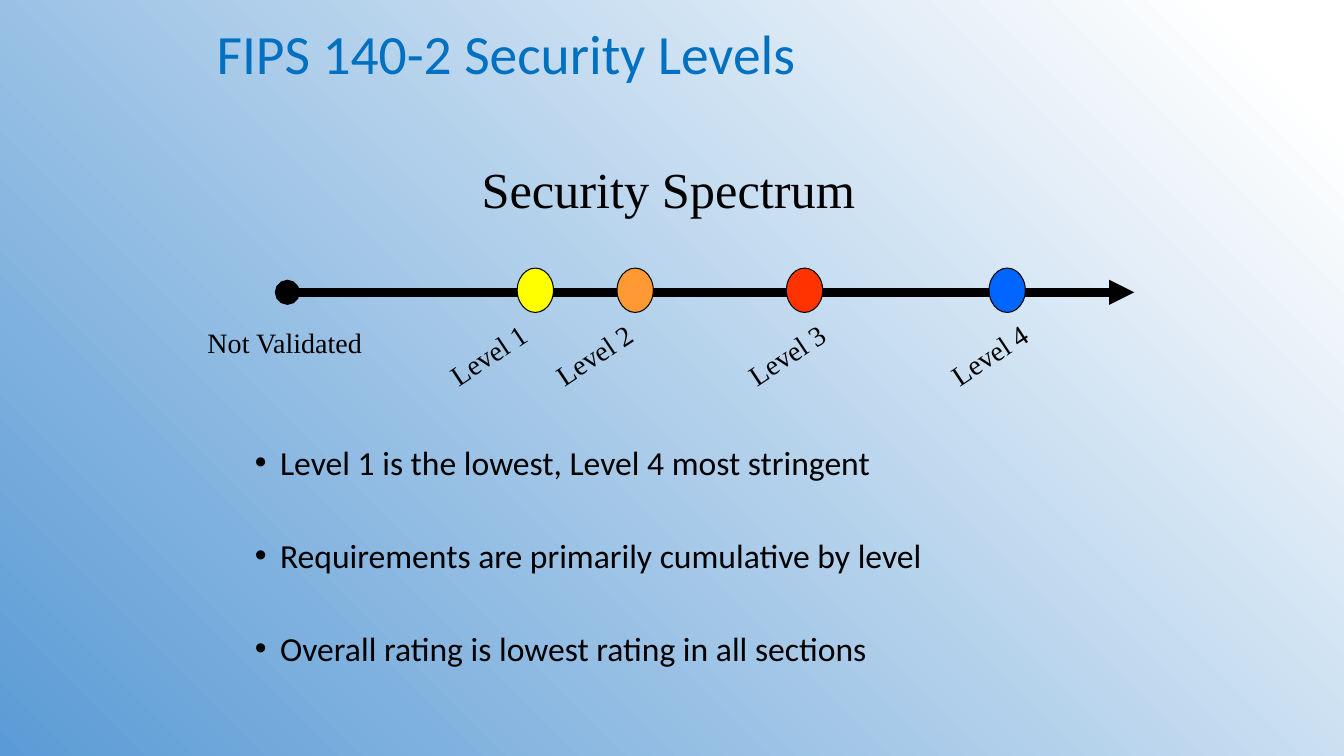
from lxml import etree
from pptx import Presentation
from pptx.dml.color import RGBColor
from pptx.enum import shapes, text
from pptx.oxml import ns
from pptx.util import Inches, Pt

BLACK = RGBColor(0, 0, 0)
WHITE = RGBColor(255, 255, 255)
SKY = RGBColor(0x5B, 0x9B, 0xD5)
TITLE_BLUE = RGBColor(0, 0x70, 0xC0)
YELLOW = RGBColor(0xFF, 0xFF, 0)
ORANGE = RGBColor(0xFF, 0x99, 0x33)
RED = RGBColor(0xFF, 0x33, 0)
BLUE = RGBColor(0, 0x66, 0xFF)

SANS, SERIF = "Calibri", "Times New Roman"
TITLE = "FIPS 140-2 Security Levels"
HEADING = "Security Spectrum"
START = "Not Validated"
POINTS = [
    "Level 1 is the lowest, Level 4 most stringent",
    "Requirements are primarily cumulative by level",
    "Overall rating is lowest rating in all sections",
]
# name, label left, marker left, marker colour
LEVELS = [
    ("Level 1", 4.32, 5.13, YELLOW),
    ("Level 2", 5.37, 6.12, ORANGE),
    ("Level 3", 7.28, 7.80, RED),
    ("Level 4", 9.29, 9.81, BLUE),
]
AXIS_LEFT, AXIS_RIGHT, AXIS_TOP = 2.85, 11.25, 2.9
MARKER_TOP, MARKER_WIDTH, MARKER_HEIGHT = 2.66, 0.36, 0.44
LABEL_TOP, LABEL_WIDTH, LABEL_HEIGHT, LABEL_TURN = 3.3, 1.04, 0.43, 326.5


def add_text(page, place, lines, font, size, color=BLACK, wrap=True,
             anchor=text.MSO_ANCHOR.TOP, **para_format):
    """Add a text box with one paragraph per line."""
    box = page.shapes.add_textbox(*map(Inches, place))
    frame = box.text_frame
    frame.word_wrap = wrap
    frame.vertical_anchor = anchor
    for index, line in enumerate(lines):
        para = frame.paragraphs[0] if index == 0 else frame.add_paragraph()
        for name, value in para_format.items():
            setattr(para, name, value)
        span = para.add_run()
        span.text = line
        span.font.name, span.font.size = font, Pt(size)
        span.font.color.rgb = color
    return box


def add_bullets(box):
    for para in box.text_frame.paragraphs:
        props = para._p.get_or_add_pPr()
        props.set("marL", str(Inches(0.25)))
        props.set("indent", str(-Inches(0.25)))
        for tag, key, value in (("a:buFont", "typeface", "Arial"),
                                ("a:buChar", "char", "•")):
            etree.SubElement(props, ns.qn(tag)).set(key, value)


def add_axis(page):
    axis = page.shapes.add_connector(
        shapes.MSO_CONNECTOR.STRAIGHT,
        *map(Inches, (AXIS_LEFT, AXIS_TOP, AXIS_RIGHT, AXIS_TOP)))
    axis.line.color.rgb = BLACK
    axis.line.width = Pt(6)
    stroke = axis.line._get_or_add_ln()
    for tag, kind in (("a:headEnd", "oval"), ("a:tailEnd", "triangle")):
        etree.SubElement(stroke, ns.qn(tag)).set("type", kind)
    etree.SubElement(axis._element.spPr, ns.qn("a:effectLst"))


def add_marker(page, left, color):
    marker = page.shapes.add_shape(
        shapes.MSO_SHAPE.OVAL,
        *map(Inches, (left, MARKER_TOP, MARKER_WIDTH, MARKER_HEIGHT)))
    marker.shadow.inherit = False
    marker.fill.solid()
    marker.fill.fore_color.rgb = color
    marker.line.color.rgb = BLACK
    marker.line.width = Pt(0.75)


def paint_background(page):
    fill = page.background.fill
    fill.gradient()
    fill.gradient_angle = 225
    for stop, (position, color) in zip(fill.gradient_stops,
                                       ((0.06, WHITE), (1, SKY))):
        stop.position = position
        stop.color.rgb = color


def main():
    deck = Presentation()
    deck.slide_width, deck.slide_height = Inches(13.33), Inches(7.5)
    page = deck.slides.add_slide(deck.slide_layouts[6])
    paint_background(page)

    add_text(page, (2.05, 0.22, 8.52, 0.69), [TITLE], SANS, 39.6, TITLE_BLUE,
             anchor=text.MSO_ANCHOR.MIDDLE, line_spacing=0.9)
    add_text(page, (2.05, 1.52, 9.16, 0.7), [HEADING], SERIF, 36,
             alignment=text.PP_ALIGN.CENTER)
    add_axis(page)
    add_text(page, (1.96, 3.18, 1.77, 0.43), [START], SERIF, 20, wrap=False)
    for name, label_left, marker_left, color in LEVELS:
        label = add_text(
            page, (label_left, LABEL_TOP, LABEL_WIDTH, LABEL_HEIGHT),
            [name], SERIF, 20, wrap=False)
        label.rotation = LABEL_TURN
        add_marker(page, marker_left, color)

    body = add_text(page, (2.43, 4.41, 8.58, 2.4), POINTS, SANS, 24,
                    line_spacing=0.8, space_before=Pt(43.4))
    body.text_frame.paragraphs[0].space_before = Pt(10)
    add_bullets(body)
    deck.save("out.pptx")


if __name__ == "__main__":
    main()
